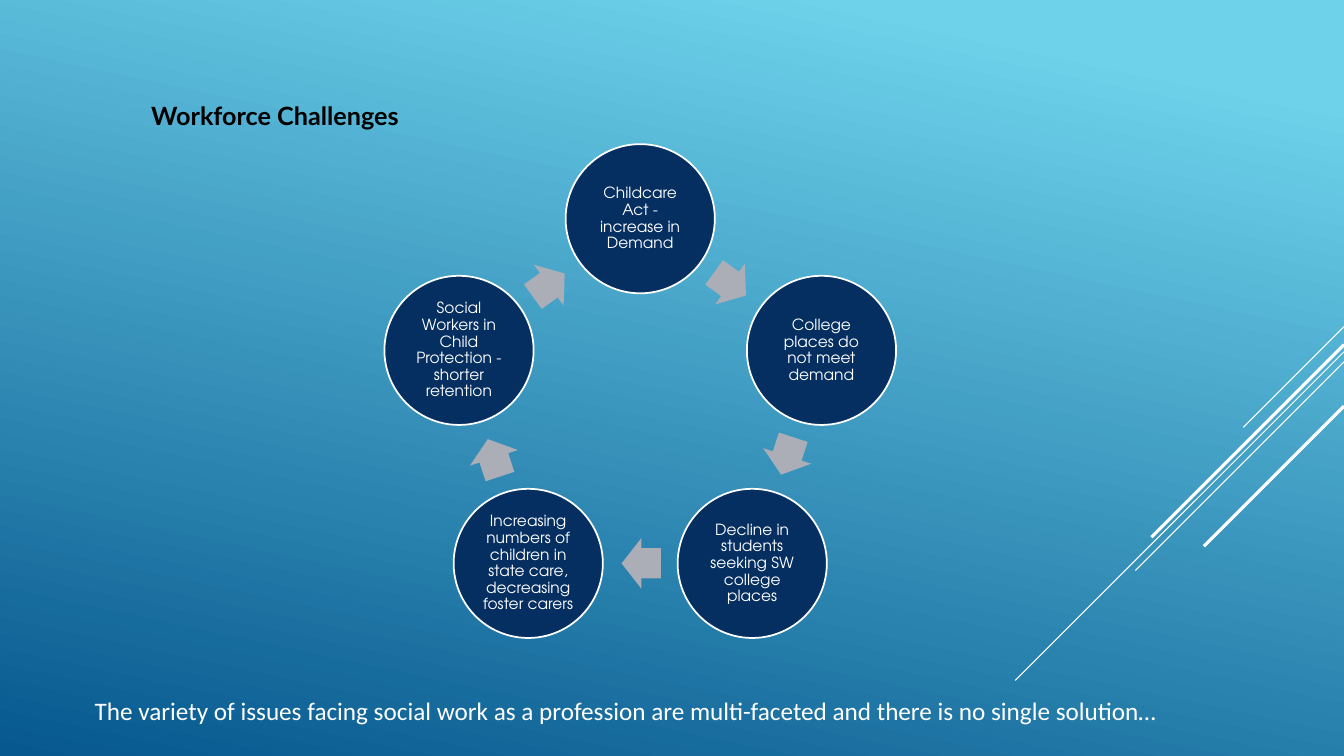
import math
import pptx
import pptx.util
import pptx.dml.color
import pptx.enum.shapes
import pptx.enum.text
import pptx.oxml.ns
import lxml.etree

PX = 9144  # EMU in one px, 100 px to the inch
WIDE, HIGH = 1333, 750
HUES = {
    "sky": "6ED2EB",
    "deep": "06588E",
    "navy": "052F61",
    "grey": "ABADB7",
    "white": "FFFFFF",
    "black": "000000",
}
STEPS = [
    "Childcare Act - increase in Demand",
    "College places do not meet demand",
    "Decline in students seeking SW college places",
    "Increasing numbers of children in state care, decreasing foster carers",
    "Social Workers in Child Protection - shorter retention",
]
# Right edge y, run to the left and down, width in points
RAYS = [
    (324, 100, 0.75),
    (349, 326, 0.75),
    (359, 207, 0.75),
    (342, 191, 2.25),
    (403, 139, 2.25),
]
SHAPE = pptx.enum.shapes.MSO_SHAPE
ALIGN = pptx.enum.text.PP_ALIGN
ANCHOR = pptx.enum.text.MSO_ANCHOR


def px(*nums):
    return [pptx.util.Emu(round(n * PX)) for n in nums]


def hue(name):
    return pptx.dml.color.RGBColor.from_string(HUES[name])


def write(shape, text, font, size, color="white", bold=False,
          align=ALIGN.LEFT, anchor=ANCHOR.TOP, pad=(10, 5), lead=1.0, after=0):
    frame = shape.text_frame
    frame.word_wrap = True
    frame.auto_size = pptx.enum.text.MSO_AUTO_SIZE.NONE
    frame.vertical_anchor = anchor
    frame.margin_left = frame.margin_right = px(pad[0])[0]
    frame.margin_top = frame.margin_bottom = px(pad[1])[0]
    para = frame.paragraphs[0]
    para.alignment = align
    para.line_spacing = lead
    para.space_after = pptx.util.Pt(after)
    run = para.add_run()
    run.text = text
    run.font.name = font
    run.font.size = pptx.util.Pt(size)
    run.font.bold = bold
    run.font.color.rgb = hue(color)


def solid(slide, kind, box, fill):
    shape = slide.shapes.add_shape(kind, *px(*box))
    shape.shadow.inherit = False
    shape.fill.solid()
    shape.fill.fore_color.rgb = hue(fill)
    shape.line.fill.background()
    return shape


def paint(slide):
    fill = slide.background.fill
    fill.gradient()
    fill.gradient_angle = 360 - 102
    for stop, (place, name) in zip(fill.gradient_stops, [(0.1, "sky"), (1, "deep")]):
        stop.position = place
        stop.color.rgb = hue(name)


def streak(slide, right):
    for top, run, width in RAYS:
        line = slide.shapes.add_connector(
            pptx.enum.shapes.MSO_CONNECTOR.STRAIGHT,
            *px(right, top, right - run, top + run))
        line.line.color.rgb = hue("white")
        line.line.width = pptx.util.Pt(width)
        lxml.etree.SubElement(line._element.spPr, pptx.oxml.ns.qn("a:effectLst"))


def head(slide, box):
    title = slide.shapes.title
    title.left, title.top, title.width, title.height = px(*box)
    write(title, "Workforce Challenges", "Lato", 18, color="black", bold=True,
          lead=1.07, after=8)


def cycle(slide, box):
    left, top, size = box
    disc = 148
    reach = 189  # ring centre to disc centre
    mid_x, mid_y = left + size / 2, top + disc / 2 + reach
    turn = 360 / len(STEPS)
    gap = reach * math.cos(math.radians(turn / 2))  # ring centre to arrow
    wide, high, lag = 39, 50, 1
    for i, step in enumerate(STEPS):
        # Disc with its label
        angle = math.radians(i * turn)
        x = mid_x + reach * math.sin(angle)
        y = mid_y - reach * math.cos(angle)
        ball = solid(slide, SHAPE.OVAL, (x - disc / 2, y - disc / 2, disc, disc), "navy")
        ball.line.color.rgb = hue("white")
        ball.line.width = pptx.util.Pt(1.25)
        write(ball, step, "TeX Gyre Adventor", 11, align=ALIGN.CENTER,
              anchor=ANCHOR.MIDDLE, pad=(2, 2), lead=0.9, after=4)
        # Arrow to the next disc
        tilt = (i + 0.5) * turn
        angle = math.radians(tilt)
        x = mid_x + gap * math.sin(angle) - lag * math.cos(angle)
        y = mid_y - gap * math.cos(angle) - lag * math.sin(angle)
        arrow = solid(slide, SHAPE.RIGHT_ARROW,
                      (x - wide / 2, y - high / 2, wide, high), "grey")
        arrow.adjustments[0] = 0.6
        arrow.adjustments[1] = 0.5
        arrow.rotation = tilt


def foot(slide, box):
    note = slide.shapes.add_textbox(*px(*box))
    write(note, "The variety of issues facing social work as a profession are "
          "multi-faceted and there is no single solution…", "Calibri", 18)


def main():
    deck = pptx.Presentation()
    deck.slide_width, deck.slide_height = px(WIDE, HIGH)
    slide = deck.slides.add_slide(deck.slide_layouts[5])
    paint(slide)
    streak(slide, WIDE)
    head(slide, (140, 92, 668, 41))
    cycle(slide, (381, 143, 508))
    foot(slide, (84, 685, 1151, 40))
    deck.save("out.pptx")


if __name__ == "__main__":
    main()
